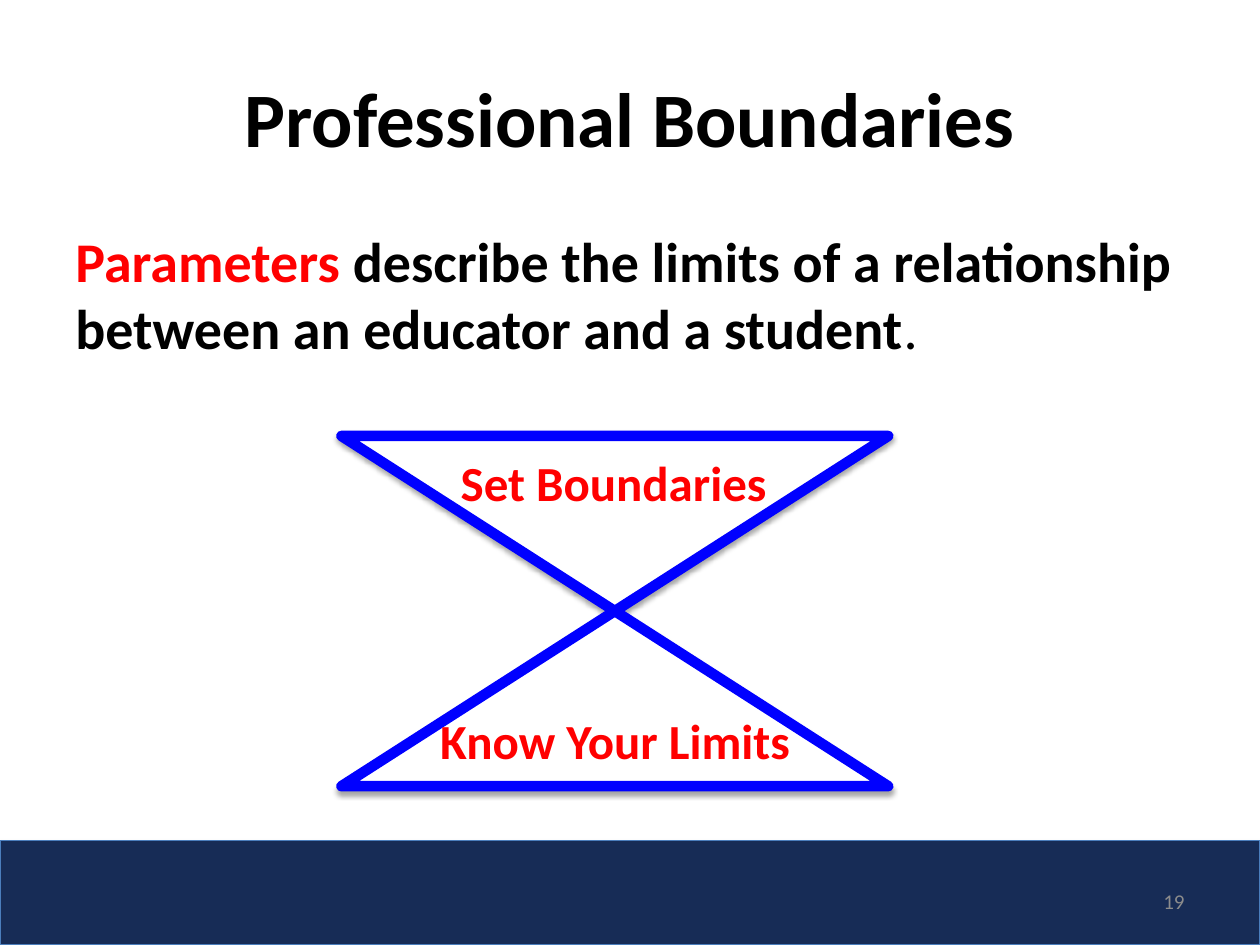
from lxml import etree
from pptx import Presentation
from pptx.dml.color import RGBColor
from pptx.enum.shapes import MSO_SHAPE
from pptx.enum.text import MSO_ANCHOR, PP_ALIGN
from pptx.oxml import parse_xml
from pptx.oxml.ns import nsdecls, qn
from pptx.util import Inches, Pt

LEFT, MID, RIGHT = PP_ALIGN.LEFT, PP_ALIGN.CENTER, PP_ALIGN.RIGHT
TOP, CENTER = MSO_ANCHOR.TOP, MSO_ANCHOR.MIDDLE
COLLATE, RECT = MSO_SHAPE.FLOWCHART_COLLATE, MSO_SHAPE.RECTANGLE

BLACK = RGBColor(0, 0, 0)
WHITE = RGBColor(255, 255, 255)
RED = RGBColor(255, 0, 0)
BLUE = RGBColor(0, 0, 255)
NAVY = RGBColor(0x17, 0x2C, 0x56)
STEEL = RGBColor(0x4B, 0x7E, 0xBC)
GRAY = RGBColor(0x8C, 0x8C, 0x8C)

TITLE = [("Professional Boundaries", BLACK, True)]
BODY = [
    ("Parameters ", RED, True),
    ("describe the limits of a relationship between an educator and a student", BLACK, True),
    (".", BLACK, False),
]
LABELS = [
    ("Set Boundaries", (3.2, 3.54, 3.34, 0.57)),
    ("Know Your Limits", (2.97, 5.59, 3.82, 0.57)),
]
PAGE = [("19", GRAY, False)]

SHADOW = (
    f'<a:effectLst {nsdecls("a")}><a:outerShdw blurRad="{Pt(3.1)}" dist="{Pt(1.8)}" '
    'dir="5400000" rotWithShape="0"><a:srgbClr val="000000"><a:alpha val="35000"/>'
    '</a:srgbClr></a:outerShdw></a:effectLst>'
)


def add_text(slide, runs, at, size, align=LEFT, anchor=TOP):
    box = slide.shapes.add_textbox(*map(Inches, at))
    frame = box.text_frame
    frame.word_wrap = True
    frame.vertical_anchor = anchor
    para = frame.paragraphs[0]
    para.alignment = align
    for text, color, bold in runs:
        run = para.add_run()
        run.text = text
        font = run.font
        font.name, font.size, font.bold = "Calibri", Pt(size), bold
        font.color.rgb = color


def add_form(slide, kind, at, fill, line, width):
    form = slide.shapes.add_shape(kind, *map(Inches, at))
    form.fill.solid()
    form.fill.fore_color.rgb = fill
    form.line.color.rgb = line
    form.line.width = Pt(width)
    etree.SubElement(form.line._get_or_add_ln(), qn("a:round"))
    form._element.spPr.append(parse_xml(SHADOW))


def main():
    deck = Presentation()
    deck.slide_width, deck.slide_height = Inches(10), Inches(7.5)
    slide = deck.slides.add_slide(deck.slide_layouts[6])
    add_text(slide, TITLE, (0.5, 0.3, 9, 1.25), 44, MID, CENTER)
    add_text(slide, BODY, (0.5, 1.75, 9, 4.95), 32)
    add_form(slide, COLLATE, (2.71, 3.46, 4.34, 2.78), WHITE, BLUE, 6)
    for text, at in LABELS:
        add_text(slide, [(text, RED, True)], at, 28, MID)
    add_form(slide, RECT, (0, 6.67, 10, 0.83), NAVY, STEEL, 0.75)
    add_text(slide, PAGE, (7.17, 6.95, 2.33, 0.4), 12, RIGHT, CENTER)
    deck.save("out.pptx")


if __name__ == "__main__":
    main()
